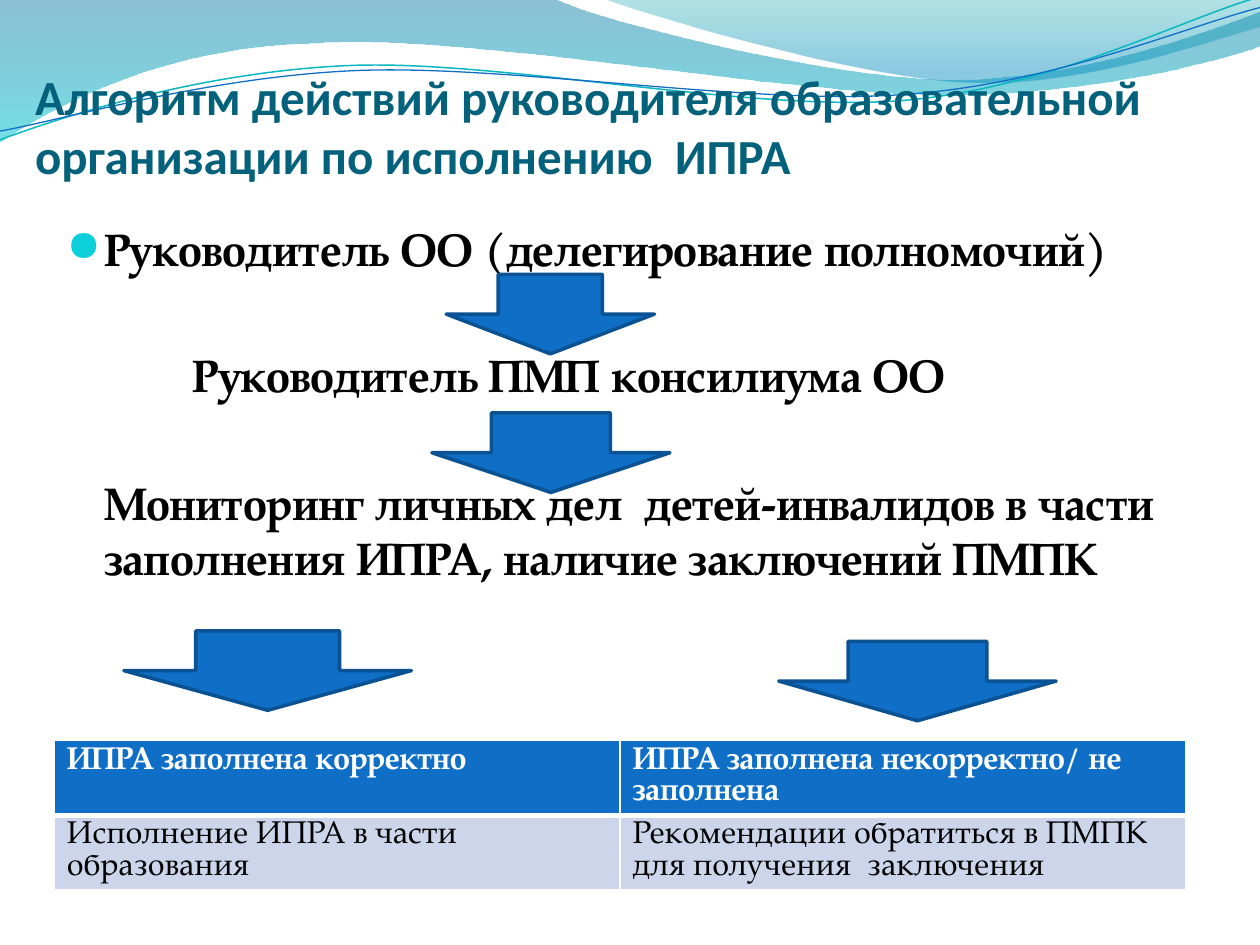
import math

import pptx
import pptx.util
import pptx.dml.color
import pptx.enum.shapes
import pptx.enum.text
import pptx.oxml
import pptx.oxml.ns
import lxml.etree

Pt = pptx.util.Pt
qn = pptx.oxml.ns.qn
INCH = 72
BODY_FONT = "TeX Gyre Pagella"
BLUE, DARK_BLUE, WHITE, BLACK = "0F6FC6", "0B5292", "FFFFFF", "000000"

# Each curve: start point, then cubic segments or straight points, in inches.
LEFT_WAVE = [(0, 0), (4.4, -0.01), (4.76, 0.17, 6.64, 0.63, 7.58, 0.63),
             (8.53, 0.63, 9.58, 0.26, 10, 0.09), (10.01, 0.36),
             (9.83, 0.44, 8.7, 0.76, 7.46, 0.75), (6.22, 0.75, 3.82, 0.28, 2.57, 0.34),
             (1.29, 0.36, 0.46, 0.83, -0.01, 1.13)]
RIGHT_WAVE = [(4.79, -0.01), (5.09, 0.11, 6.82, 0.62, 7.69, 0.65),
              (8.56, 0.69, 9.61, 0.32, 10, 0.21), (10, 0)]
TEAL_LINE = [(0, 1.11), (0.48, 0.93, 1.58, 0.57, 2.77, 0.52),
             (3.95, 0.47, 5.93, 0.89, 7.13, 0.8), (8.33, 0.71, 9.38, 0.15, 9.98, -0.02)]
BLUE_LINE = [(0, 1.04), (0.47, 0.96, 1.64, 0.61, 2.83, 0.56),
             (4.03, 0.51, 5.97, 0.84, 7.17, 0.75), (8.36, 0.67, 9.41, 0.21, 10, 0.06)]
LINE_CENTER = (4.99, 0.58)
LINE_TILT = -2.7

ARROWS = [(255, 156.8, 119), (246.8, 236, 136), (70.8, 360.5, 164.3), (445, 366.5, 158.5)]
STEPS = [
    ("Руководитель ОО (делегирование полномочий)",
     {"left": 21.6, "first": -21.6, "before": 3, "bullet": True}),
    ("Руководитель ПМП консилиума ОО", {"left": 72, "first": 0, "before": 41}),
    ("Мониторинг личных дел  детей-инвалидов в части заполнения ИПРА, "
     "наличие заключений ПМПК", {"left": 21.6, "first": 0, "before": 41.3}),
]
OUTCOMES = [
    ["ИПРА заполнена корректно", "ИПРА заполнена некорректно/ не заполнена"],
    ["Исполнение ИПРА в части образования",
     "Рекомендации обратиться в ПМПК для получения  заключения"],
]


def color(value):
    return pptx.dml.color.RGBColor.from_string(value)


def apply(target, values):
    for name, value in values.items():
        setattr(target, name, value)


def write(para, text, font, size, fill, bold):
    span = para.add_run()
    span.text = text
    apply(span.font, {"name": font, "size": Pt(size), "bold": bold})
    span.font.color.rgb = color(fill)


def set_line(shape, fill, width):
    shape.line.color.rgb = color(fill)
    shape.line.width = Pt(width)


def turn(point, degrees):
    """Turn a point clockwise about the centre of the wave lines."""
    angle = math.radians(degrees)
    x, y = point[0] - LINE_CENTER[0], point[1] - LINE_CENTER[1]
    return (LINE_CENTER[0] + x * math.cos(angle) - y * math.sin(angle),
            LINE_CENTER[1] + x * math.sin(angle) + y * math.cos(angle))


def add_curve(page, curve, close, tilt=0):
    """Outline the control points, then join each three into a cubic segment."""
    pairs = [pair for segment in curve for pair in zip(segment[::2], segment[1::2])]
    points = [(Pt(x * INCH), Pt(y * INCH)) for x, y in (turn(pair, -tilt) for pair in pairs)]
    builder = page.shapes.build_freeform(*points[0])
    builder.add_line_segments(points[1:], close=close)
    shape = builder.convert_to_shape()
    shape.shadow.inherit = False
    shape.rotation = tilt
    corners = iter(list(shape._element.iter(qn("a:lnTo"))))
    for segment in curve[1:]:
        group = [next(corners) for _ in segment[::2]]
        if len(group) == 3:
            cubic = lxml.etree.Element(qn("a:cubicBezTo"))
            group[0].addprevious(cubic)
            for corner in group:
                cubic.append(corner[0])
                corner.getparent().remove(corner)
    return shape


def add_wave(page, curve, stops):
    """Add a closed wave; each stop is position, colour, opacity in percent."""
    shape = add_curve(page, curve, True)
    shape.line.fill.background()
    shape.fill.gradient()
    shape.fill.gradient_angle = 270
    for stop, (position, fill, _) in zip(shape.fill.gradient_stops, stops):
        stop.position = position
        stop.color.rgb = color(fill)
    for node, (_, _, opacity) in zip(shape._element.iter(qn("a:srgbClr")), stops):
        lxml.etree.SubElement(node, qn("a:alpha"), val=str(opacity * 1000))


def add_wave_line(page, curve, fill, width):
    shape = add_curve(page, curve, False, LINE_TILT)
    shape.fill.background()
    set_line(shape, fill, width)


def format_title(page, text):
    title = page.shapes.title
    apply(title, {"left": Pt(20), "top": Pt(26.3), "width": Pt(686), "height": Pt(79.2)})
    frame = title.text_frame
    apply(frame, {"margin_left": 0, "margin_top": Pt(3.6), "margin_right": 0,
                  "margin_bottom": 0, "word_wrap": True,
                  "vertical_anchor": pptx.enum.text.MSO_ANCHOR.BOTTOM})
    frame.paragraphs[0].alignment = pptx.enum.text.PP_ALIGN.LEFT
    write(frame.paragraphs[0], text, "Calibri", 28, "04617B", True)
    page.shapes._spTree.append(title._element)  # in front of the waves


def add_bullet(para):
    properties = para._p.get_or_add_pPr()
    tint = lxml.etree.SubElement(properties, qn("a:buClr"))
    lxml.etree.SubElement(tint, qn("a:srgbClr"), val="0BD0D9")
    lxml.etree.SubElement(properties, qn("a:buSzPct"), val="95000")
    lxml.etree.SubElement(properties, qn("a:buFont"), typeface="OpenSymbol")
    lxml.etree.SubElement(properties, qn("a:buChar"), char="●")


def add_steps(page):
    box = page.shapes.add_textbox(Pt(31), Pt(122.4), Pt(657.4), Pt(391))
    frame = box.text_frame
    frame.word_wrap = True
    for index, (text, layout) in enumerate(STEPS):
        para = frame.add_paragraph() if index else frame.paragraphs[0]
        apply(para, {"line_spacing": Pt(31.4), "space_before": Pt(layout["before"])})
        properties = para._p.get_or_add_pPr()
        properties.set("marL", str(Pt(layout["left"])))
        properties.set("indent", str(Pt(layout["first"])))
        if layout.get("bullet"):
            add_bullet(para)
        write(para, text, BODY_FONT, 26, BLACK, True)


def add_down_arrow(page, left, top, width):
    arrow = page.shapes.add_shape(pptx.enum.shapes.MSO_SHAPE.DOWN_ARROW,
                                  Pt(left), Pt(top), Pt(width), Pt(45.4))
    arrow.shadow.inherit = False
    arrow.fill.solid()
    arrow.fill.fore_color.rgb = color(BLUE)
    set_line(arrow, DARK_BLUE, 2)


def add_borders(cell, widths):
    properties = cell._tc.get_or_add_tcPr()
    for side, width in widths.items():
        border = lxml.etree.SubElement(properties, qn("a:ln" + side), w=str(Pt(width)))
        solid = lxml.etree.SubElement(border, qn("a:solidFill"))
        lxml.etree.SubElement(solid, qn("a:srgbClr"), val=WHITE)


def add_outcomes(page):
    table = page.shapes.add_table(2, 2, Pt(31), Pt(423), Pt(646.6), Pt(85)).table
    for row, texts in enumerate(OUTCOMES):
        header = row == 0
        for column, text in enumerate(texts):
            cell = table.cell(row, column)
            add_borders(cell, {"L": 1, "R": 1, "T": 1 if header else 3,
                               "B": 3 if header else 1})
            cell.fill.solid()
            cell.fill.fore_color.rgb = color(BLUE if header else "CCD5EA")
            para = cell.text_frame.paragraphs[0]
            para.line_spacing = Pt(17.8)
            write(para, text, BODY_FONT, 18, WHITE if header else BLACK, header)


def main():
    deck = pptx.Presentation()
    apply(deck, {"slide_width": Pt(720), "slide_height": Pt(540)})
    page = deck.slides.add_slide(deck.slide_layouts.get_by_name("Title Only"))
    add_wave(page, LEFT_WAVE, [(0, "0074A1", 45), (1, "00C6CF", 55)])
    add_wave(page, RIGHT_WAVE, [(0, "00A1A9", 30), (0.8, "008BBF", 45)])
    add_wave_line(page, TEAL_LINE, "0AB8BF", 0.85)
    add_wave_line(page, BLUE_LINE, BLUE, 0.75)
    format_title(page, "Алгоритм действий руководителя образовательной "
                       "организации по исполнению  ИПРА")
    add_steps(page)
    for left, top, width in ARROWS:
        add_down_arrow(page, left, top, width)
    add_outcomes(page)
    deck.save("out.pptx")


if __name__ == "__main__":
    main()
